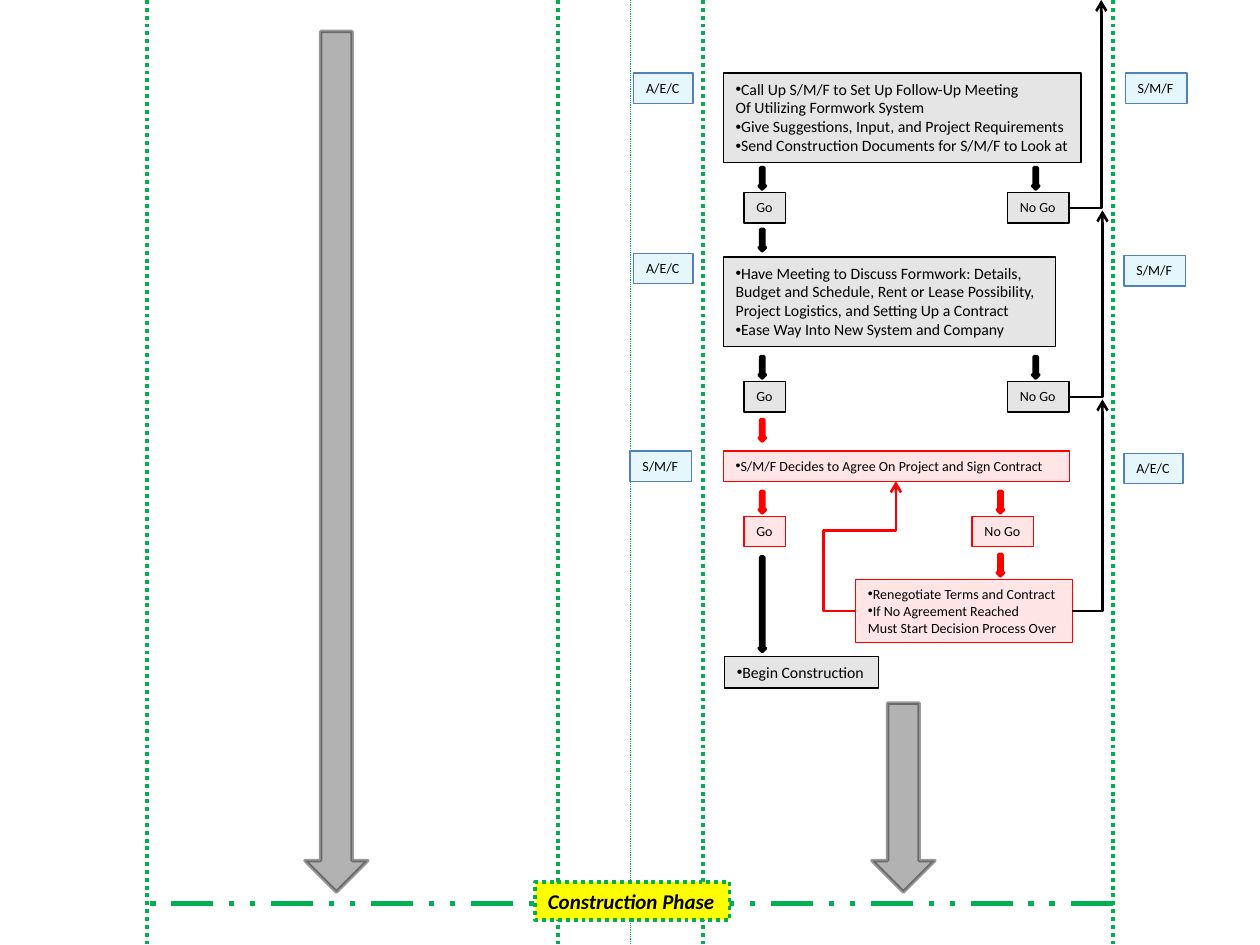
import dataclasses

import pptx
import pptx.dml.color
import pptx.enum.dml
import pptx.enum.shapes
import pptx.enum.text
import pptx.oxml.ns
import pptx.util
from lxml import etree

SHAPE = pptx.enum.shapes.MSO_SHAPE
CONNECTOR = pptx.enum.shapes.MSO_CONNECTOR
DASH = pptx.enum.dml.MSO_LINE
Inches = pptx.util.Inches
qn = pptx.oxml.ns.qn


@dataclasses.dataclass(frozen=True)
class Theme:
    font: str = "Calibri"
    black: str = "000000"
    red: str = "FF0000"
    green: str = "00B050"
    blue: str = "00B0F0"
    blue_edge: str = "4F81BD"
    yellow: str = "FFFF00"
    small: int = 8
    body: int = 9
    banner: int = 12
    tint: int = 10
    thin: float = 0.75
    route: float = 1.5
    arrow: float = 2
    lane: float = 2.25


THEME = Theme()
BULLET = "•"

# Columns and common sizes, in inches
LANES = (4.43, 1.17, 5.58, 8.83)
STEP_LEFT = 5.74
GO_CENTER, NO_GO_CENTER, RENEGOTIATE_CENTER = 6.05, 8.22, 7.94
BOX_HEIGHT = 0.24
ARROW_WIDTH, ARROW_HEIGHT = 0.05, 0.17
GATE_WIDTHS = {"Go": 0.33, "No Go": 0.49}
ROLE_WIDTHS = {"S/M/F": 0.49, "A/E/C": 0.47}


def rgb(color):
    return pptx.dml.color.RGBColor.from_string(color)


def set_format(target, values):
    for name, value in values.items():
        setattr(target, name, value)


def set_opacity(fill_parent, percent):
    color = fill_parent.find(qn("a:solidFill")).find(qn("a:srgbClr"))
    etree.SubElement(color, qn("a:alpha")).set("val", str(percent * 1000))


def style_line(line, color, width, dash=None):
    line.color.rgb = rgb(color)
    set_format(line, {"width": pptx.util.Pt(width), "dash_style": dash})


def add_filled(slide, kind, place, fill, edge, width, opacity=100, dash=None):
    shape = slide.shapes.add_shape(kind, *map(Inches, place))
    shape.shadow.inherit = False
    shape.fill.solid()
    shape.fill.fore_color.rgb = rgb(fill)
    if opacity < 100:
        set_opacity(shape.element.spPr, opacity)
    style_line(shape.line, edge, width, dash)
    return shape


def write_lines(shape, lines, size, wrap=False, **emphasis):
    """Fill a shape with left-aligned lines; a leading bullet sign becomes a real bullet."""
    frame = shape.text_frame
    set_format(frame, {
        "word_wrap": wrap,
        "auto_size": pptx.enum.text.MSO_AUTO_SIZE.SHAPE_TO_FIT_TEXT,
        "vertical_anchor": pptx.enum.text.MSO_ANCHOR.TOP,
    })
    font = {"name": THEME.font, "size": pptx.util.Pt(size), **emphasis}
    for index, line in enumerate(lines):
        para = frame.add_paragraph() if index else frame.paragraphs[0]
        para.alignment = pptx.enum.text.PP_ALIGN.LEFT
        if line.startswith(BULLET):
            properties = para._p.get_or_add_pPr()
            etree.SubElement(properties, qn("a:buFont")).set("typeface", "Arial")
            etree.SubElement(properties, qn("a:buChar")).set("char", BULLET)
        span = para.add_run()
        span.text = line.removeprefix(BULLET)
        set_format(span.font, font)
        span.font.color.rgb = rgb(THEME.black)


def add_step(slide, place, lines, color=THEME.black, size=THEME.body, wrap=False):
    box = add_filled(slide, SHAPE.RECTANGLE, place, color, color, THEME.thin, THEME.tint)
    write_lines(box, lines, size, wrap)


def add_role(slide, left, top, role):
    place = (left, top, ROLE_WIDTHS[role], BOX_HEIGHT)
    box = add_filled(slide, SHAPE.RECTANGLE, place, THEME.blue, THEME.blue_edge,
                     THEME.thin, THEME.tint)
    write_lines(box, [role], THEME.small)


def add_small_arrow(slide, center, top, color=THEME.black, height=ARROW_HEIGHT):
    place = (center - ARROW_WIDTH / 2, top, ARROW_WIDTH, height)
    add_filled(slide, SHAPE.DOWN_ARROW, place, color, color, THEME.arrow)


def add_phase_arrow(slide, left, top, bottom=7.08):
    arrow = add_filled(slide, SHAPE.DOWN_ARROW, (left, top, 0.5, bottom - top),
                       THEME.black, THEME.black, THEME.arrow, 30)
    set_opacity(arrow.element.spPr.find(qn("a:ln")), 40)


def add_gates(slide, top, no_go_center, color=THEME.black):
    """Draw the Go and No Go boxes of one decision, each under its arrow."""
    for label, center in (("Go", GO_CENTER), ("No Go", no_go_center)):
        width = GATE_WIDTHS[label]
        place = (center + 0.02 - width / 2, top, width, BOX_HEIGHT)
        add_step(slide, place, [label], color, THEME.small)
        add_small_arrow(slide, center, top - 0.2, color)


def add_line(slide, start, end, color, width, dash=None, kind=CONNECTOR.STRAIGHT):
    line = slide.shapes.add_connector(kind, *map(Inches, (*start, *end)))
    style_line(line.line, color, width, dash)
    etree.SubElement(line.element.spPr, qn("a:effectLst"))
    return line


def add_route(slide, start, end, color=THEME.black, preset="bentConnector2", bends=()):
    """Draw an elbow arrow; bends are the preset's adjustments, in shares of its size."""
    route = add_line(slide, start, end, color, THEME.route, kind=CONNECTOR.ELBOW)
    properties = route.element.spPr
    geometry = properties.find(qn("a:prstGeom"))
    geometry.set("prst", preset)
    for number, share in enumerate(bends, 1):
        guide = etree.SubElement(geometry.find(qn("a:avLst")), qn("a:gd"))
        guide.set("name", f"adj{number}")
        guide.set("fmla", f"val {round(share * 100000)}")
    etree.SubElement(properties.find(qn("a:ln")), qn("a:tailEnd")).set("type", "arrow")


def add_steps(slide):
    add_step(slide, (STEP_LEFT, 0.58, 2.84, 0.71), [
        "•Call Up S/M/F to Set Up Follow-Up Meeting",
        "Of Utilizing Formwork System",
        "•Give Suggestions, Input, and Project Requirements",
        "•Send Construction Documents for S/M/F to Look at"])
    add_step(slide, (STEP_LEFT, 2.04, 2.64, 0.71), [
        "•Have Meeting to Discuss Formwork: Details,",
        "Budget and Schedule, Rent or Lease Possibility,",
        "Project Logistics, and Setting Up a Contract",
        "•Ease Way Into New System and Company"])
    add_step(slide, (STEP_LEFT, 3.58, 2.75, BOX_HEIGHT), [
        "•S/M/F Decides to Agree On Project and Sign Contract"], THEME.red, THEME.small, True)
    add_step(slide, (6.79, 4.6, 1.72, 0.5), [
        "•Renegotiate Terms and Contract",
        "•If No Agreement Reached",
        "Must Start Decision Process Over"], THEME.red, THEME.small)
    add_step(slide, (5.75, 5.21, 1.22, 0.25), ["•Begin Construction"])


def add_flow(slide):
    add_gates(slide, 1.53, NO_GO_CENTER)
    add_gates(slide, 3.03, NO_GO_CENTER)
    add_gates(slide, 4.1, RENEGOTIATE_CENTER, THEME.red)
    add_small_arrow(slide, GO_CENTER, 1.82)
    add_small_arrow(slide, GO_CENTER, 3.33, THEME.red)
    add_small_arrow(slide, RENEGOTIATE_CENTER, 4.4, THEME.red)
    add_small_arrow(slide, GO_CENTER, 4.42, height=0.75)
    for start, end in (((8.49, 1.65), (8.74, 0)), ((8.49, 3.15), (8.75, 1.67)),
                       ((8.51, 4.85), (8.75, 3.17))):
        add_route(slide, start, end)
    add_route(slide, (6.79, 4.85), (7.11, 3.82), THEME.red, "bentConnector4", (-0.79, 0.62))


def add_phase_end(slide):
    add_phase_arrow(slide, 2.42, 0.25)
    add_phase_arrow(slide, 6.92, 5.58)
    add_line(slide, (8.83, 7.17), (1.17, 7.17), THEME.green, 3, DASH.DASH_DOT_DOT)
    banner = add_filled(slide, SHAPE.RECTANGLE, (4.25, 7, 1.54, 0.3), THEME.yellow,
                        THEME.green, THEME.lane, dash=DASH.ROUND_DOT)
    write_lines(banner, ["Construction Phase"], THEME.banner, bold=True, italic=True)


def main():
    deck = pptx.Presentation()
    set_format(deck, {"slide_width": Inches(10), "slide_height": Inches(7.5)})
    slide = deck.slides.add_slide(deck.slide_layouts[6])
    for left, width in (*((lane, THEME.lane) for lane in LANES), (5, 0.5)):
        add_line(slide, (left, 0), (left, 7.5), THEME.green, width, DASH.ROUND_DOT)
    add_steps(slide)
    add_flow(slide)
    for role in ((5.03, 0.58, "A/E/C"), (8.93, 0.58, "S/M/F"), (5.03, 2.01, "A/E/C"),
                 (8.92, 2.03, "S/M/F"), (5, 3.58, "S/M/F"), (8.92, 3.6, "A/E/C")):
        add_role(slide, *role)
    add_phase_end(slide)
    deck.save("out.pptx")


if __name__ == "__main__":
    main()
